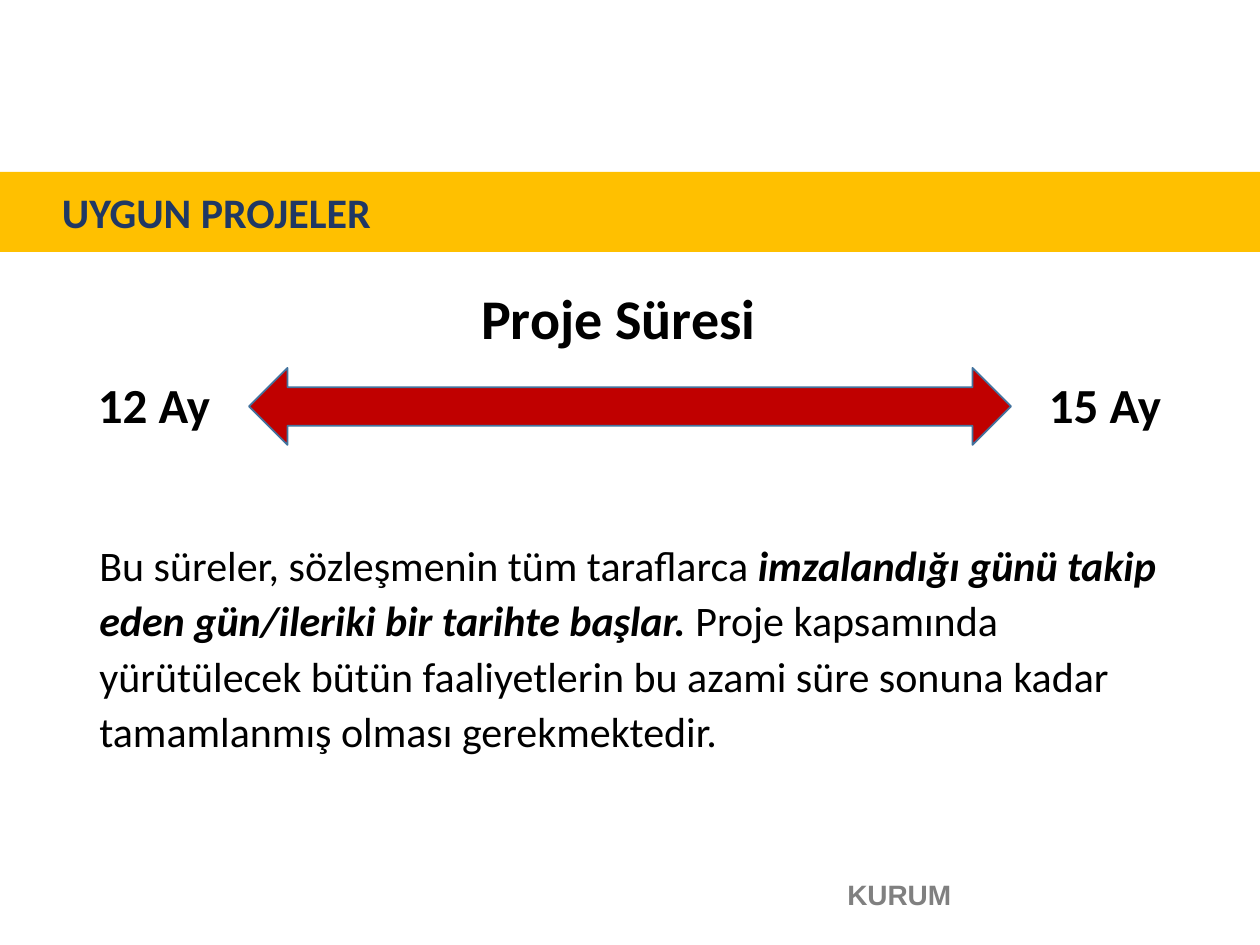
from pptx import Presentation
from pptx.dml.color import RGBColor
from pptx.enum.shapes import MSO_SHAPE as Shape
from pptx.enum.text import MSO_ANCHOR as Anchor, PP_ALIGN as Align
from pptx.util import Emu, Pt

SCALE = 914400 // 126
WIDTH, HEIGHT = 1260, 945

BLACK = RGBColor(0, 0, 0)
NAVY = RGBColor(0x20, 0x38, 0x64)
GRAY = RGBColor(0x80, 0x80, 0x80)
AMBER = RGBColor(0xFF, 0xC0, 0x00)
RED = RGBColor(0xC0, 0x00, 0x00)
BLUE = RGBColor(0x43, 0x73, 0x9E)

BANNER = (0, 172, WIDTH, 80)
ARROW = (249, 368, 762, 77)
BANNER_TEXT = "UYGUN PROJELER"
LABELS = [
    ("Proje Süresi", (444, 277, 349, 81), 32),
    ("12 Ay", (60, 368, 188, 72), 28),
    ("15 Ay", (1011, 368, 188, 72), 28),
]
BODY = [
    ("Bu süreler, sözleşmenin tüm taraflarca ", False),
    ("imzalandığı günü takip eden gün/ileriki bir tarihte başlar. ", True),
    ("Proje kapsamında yürütülecek bütün faaliyetlerin bu azami süre "
     "sonuna kadar tamamlanmış olması gerekmektedir.", False),
]
FOOTER = "KURUM"


def px(*lengths):
    return [Emu(length * SCALE) for length in lengths]


def write(box, text, size=24, color=BLACK, font="Calibri", bold=True, italic=False,
          align=Align.LEFT):
    para = box.text_frame.paragraphs[0]
    para.alignment = align
    span = para.add_run()
    span.text = text
    span.font.name, span.font.size = font, Pt(size)
    span.font.bold, span.font.italic = bold, italic
    span.font.color.rgb = color
    return para


def add_box(page, place):
    box = page.shapes.add_textbox(*px(*place))
    box.text_frame.word_wrap = True
    return box


def add_filled(page, kind, place, fill):
    shape = page.shapes.add_shape(kind, *px(*place))
    shape.shadow.inherit = False
    shape.fill.solid()
    shape.fill.fore_color.rgb = fill
    return shape


def main():
    deck = Presentation()
    deck.slide_width, deck.slide_height = px(WIDTH, HEIGHT)
    page = deck.slides.add_slide(deck.slide_layouts[6])

    footer = add_box(page, (835, 871, 150, 40))
    write(footer, FOOTER, size=16, color=GRAY, font="Arial")

    banner = add_filled(page, Shape.RECTANGLE, BANNER, AMBER)
    banner.line.fill.background()
    banner.text_frame.margin_left = px(62)[0]
    banner.text_frame.vertical_anchor = Anchor.MIDDLE
    write(banner, BANNER_TEXT, color=NAVY)

    body = add_box(page, (87, 528, 1086, 299))
    for text, strong in BODY:
        para = write(body, text, bold=strong, italic=strong)
    para.line_spacing = 1.1

    arrow = add_filled(page, Shape.LEFT_RIGHT_ARROW, ARROW, RED)
    arrow.line.color.rgb = BLUE
    arrow.line.width = Pt(1)

    for text, place, size in LABELS:
        write(add_box(page, place), text, size=size, align=Align.CENTER)

    deck.save("out.pptx")


if __name__ == "__main__":
    main()
